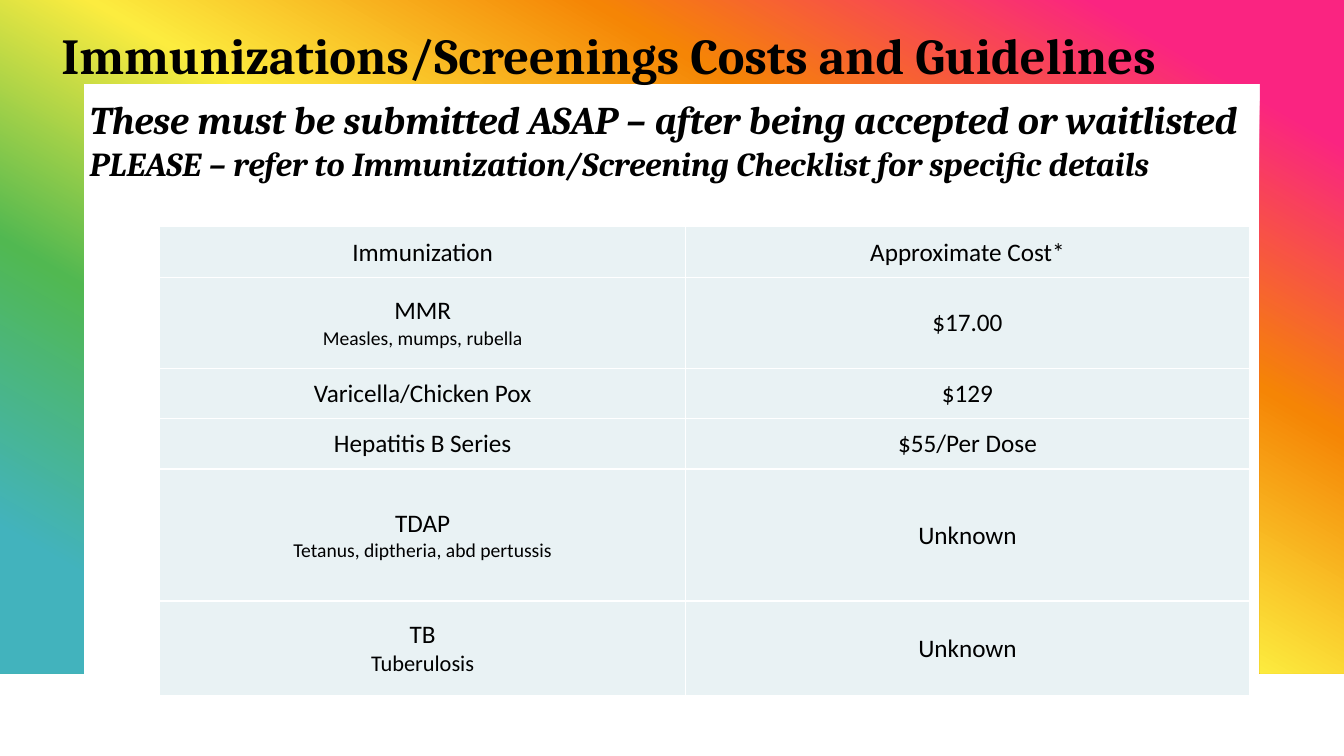
"""Builds the slide on immunization and screening costs."""
from lxml.etree import SubElement
from pptx import Presentation
from pptx.dml.color import RGBColor
from pptx.enum.text import MSO_ANCHOR as Anchor, PP_ALIGN as Align
from pptx.oxml.ns import qn
from pptx.util import Pt


def color(hex_code):
    """Turn a hex string into a colour."""
    return RGBColor.from_string(hex_code)


def set_font(font, size, name, bold=False, italic=False):
    """Style a font in black."""
    font.size, font.name = Pt(size), name
    font.bold, font.italic = bold, italic
    font.color.rgb = color("000000")


deck = Presentation()
deck.slide_width, deck.slide_height = Pt(960), Pt(540)
slide = deck.slides.add_slide(deck.slide_layouts[6])

outline = slide.shapes.build_freeform(0, 0, scale=Pt(1))
outline.add_line_segments([
    (960, 0), (960, 481), (900.5, 481), (900.5, 60.5),
    (60.5, 60.5), (60.5, 481), (0, 481)])
rainbow = outline.convert_to_shape()
rainbow.shadow.inherit = False
rainbow.line.fill.background()
rainbow.fill.gradient()
rainbow.fill.gradient_angle = 240
stops = rainbow._element.spPr.find(qn("a:gradFill")).find(qn("a:gsLst"))
for old_stop in list(stops):
    stops.remove(old_stop)
for percent, hex_code in [(10, "FA2481"), (30, "F58505"), (50, "FCEC3F"),
                          (70, "51B851"), (90, "42B3BD")]:
    stop = SubElement(stops, qn("a:gs"), pos=str(percent * 1000))
    SubElement(stop, qn("a:srgbClr"), val=hex_code)

title = slide.shapes.add_textbox(Pt(36.7), Pt(13.7), Pt(823), Pt(51)).text_frame
title.word_wrap = False
title.text = "Immunizations/Screenings Costs and Guidelines"
set_font(title.paragraphs[0].font, 36, "Cambria", bold=True)

notice = slide.shapes.add_textbox(Pt(56.9), Pt(64.8), Pt(868), Pt(70.6)).text_frame
notice.word_wrap = True
notice.text = ("These must be submitted ASAP – after being accepted or waitlisted\n"
               "PLEASE – refer to Immunization/Screening Checklist for specific details")
for paragraph, size in zip(notice.paragraphs, (28, 24)):
    set_font(paragraph.font, size, "Cambria", bold=True, italic=True)

costs = [
    (36, "Immunization", None, None, "Approximate Cost*"),
    (65, "MMR", "Measles, mumps, rubella", 14, "$17.00"),
    (36, "Varicella/Chicken Pox", None, None, "$129"),
    (36, "Hepatitis B Series", None, None, "$55/Per Dose"),
    (94.3, "TDAP", "Tetanus, diptheria, abd pertussis", 14, "Unknown"),
    (67.5, "TB", "Tuberulosis", 16, "Unknown"),
]
table = slide.shapes.add_table(
    len(costs), 2, Pt(114), Pt(162), Pt(778.4), Pt(334.8)).table
table.first_row = table.horz_banding = False
table.columns[0].width, table.columns[1].width = Pt(375.8), Pt(402.6)

for row, (height, immunization, detail, detail_size, cost) in enumerate(costs):
    table.rows[row].height = Pt(height)
    for column, words in enumerate((immunization, cost)):
        cell = table.cell(row, column)
        cell.vertical_anchor = Anchor.MIDDLE
        cell.margin_left = cell.margin_right = cell.margin_top = Pt(0.72)
        cell.margin_bottom = 0
        paragraph = cell.text_frame.paragraphs[0]
        paragraph.alignment = Align.CENTER
        set_font(paragraph.font, 18, "Calibri")
        paragraph.add_run().text = words
        if detail and column == 0:
            paragraph.add_line_break()
            detail_run = paragraph.add_run()
            detail_run.text = detail
            detail_run.font.size = Pt(detail_size)
        properties = cell._tc.get_or_add_tcPr()
        for side in ("a:lnL", "a:lnR", "a:lnT", "a:lnB"):
            border = SubElement(properties, qn(side), w=str(Pt(1)))
            SubElement(SubElement(border, qn("a:solidFill")),
                       qn("a:srgbClr"), val="FFFFFF")
        cell.fill.solid()
        cell.fill.fore_color.rgb = color("E9F2F4")

deck.save("out.pptx")
